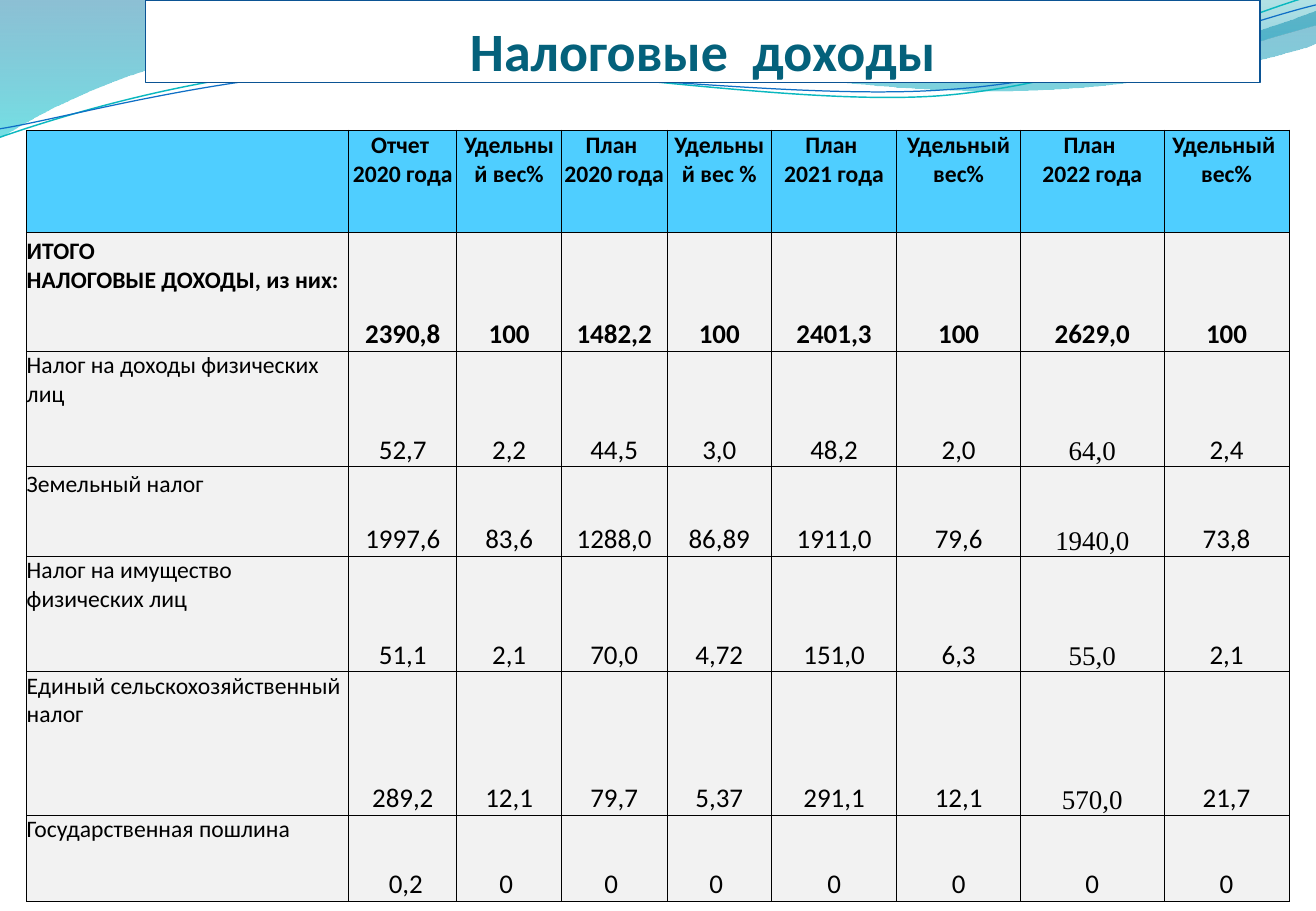
from lxml import etree
from pptx import Presentation
from pptx.dml.color import RGBColor
from pptx.enum.shapes import MSO_SHAPE
from pptx.enum.text import MSO_ANCHOR, PP_ALIGN
from pptx.oxml import parse_xml
from pptx.oxml.ns import qn
from pptx.util import Inches, Pt

HEADERS = ["", "Отчет \n2020 года", "Удельный вес%", "План \n2020 года", "Удельный вес %",
           "План \n2021 года", "Удельный вес%", "План \n2022 года", "Удельный \nвес%"]
TAXES = [
    ["ИТОГО\nНАЛОГОВЫЕ ДОХОДЫ, из них:", "2390,8", "100", "1482,2", "100", "2401,3", "100", "2629,0", "100"],
    ["Налог на доходы физических лиц", "52,7", "2,2", "44,5", "3,0", "48,2", "2,0", "64,0", "2,4"],
    ["Земельный налог", "1997,6", "83,6", "1288,0", "86,89", "1911,0", "79,6", "1940,0", "73,8"],
    ["Налог на имущество физических лиц", "51,1", "2,1", "70,0", "4,72", "151,0", "6,3", "55,0", "2,1"],
    ["Единый сельскохозяйственный налог", "289,2", "12,1", "79,7", "5,37", "291,1", "12,1", "570,0", "21,7"],
    ["Государственная пошлина", " 0,2", "0 ", "0 ", "0 ", "0", "0", "0", "0"],
]
COLUMN_WIDTHS = [2.65, 0.89, 0.86, 0.87, 0.86, 1.03, 1.02, 1.18, 1.03]
ROW_HEIGHTS = [0.84, 0.98, 0.95, 0.74, 0.95, 1.18, 0.71]
LABEL_OFFSETS = {1: 0.04, 3: 0.03}
PLAN_2022 = 7

BANDS = [
    ([(0, 0), (4.77, 0), (5.15, 0.17, 7.19, 0.63, 8.22, 0.63), (9.24, 0.63, 10.38, 0.26, 10.83, 0.09),
      (10.83, 0.36), (10.65, 0.44, 9.42, 0.76, 8.08, 0.75), (6.74, 0.75, 4.14, 0.28, 2.79, 0.34),
      (1.4, 0.35, 0.5, 0.83, 0, 1.13)],
     [(0, "0074A1", 45), (1, "00C6CF", 55)]),
    ([(5.19, 0), (5.52, 0.11, 7.39, 0.62, 8.33, 0.65), (9.27, 0.69, 10.42, 0.32, 10.83, 0.21), (10.83, 0)],
     [(0, "00A1A9", 30), (0.8, "008BBF", 45)]),
]
WAVES = [
    ([(0, 1.13), (0.52, 0.95, 1.71, 0.58, 3, 0.53), (4.28, 0.47, 6.42, 0.88, 7.72, 0.79),
      (9.02, 0.69, 10.17, 0.14, 10.81, -0.04)], "0AB8BF", 0.85),
    ([(0, 1.06), (0.51, 0.98, 1.77, 0.62, 3.07, 0.57), (4.36, 0.52, 6.47, 0.83, 7.76, 0.74),
      (9.06, 0.66, 10.2, 0.19, 10.83, 0.04)], "0F6FC6", 0.75),
]


def color(hex_string):
    return RGBColor.from_string(hex_string)


def add_outline(slide, left, top, segments, close):
    points = [(Inches(left + x), Inches(top + y))
              for segment in segments for x, y in zip(segment[::2], segment[1::2])]
    builder = slide.shapes.build_freeform(*points[0])
    builder.add_line_segments(points[1:], close=close)
    outline = builder.convert_to_shape()
    outline.shadow.inherit = False
    lines = iter(list(outline._element.iter(qn("a:lnTo"))))
    for segment in segments[1:]:
        line = next(lines)
        if len(segment) == 6:
            line.tag = qn("a:cubicBezTo")
            for _ in range(2):
                following = next(lines)
                line.append(following[0])
                following.getparent().remove(following)
    return outline


def add_backdrop(slide, left, top):
    for segments, stops in BANDS:
        band = add_outline(slide, left, top, segments, True)
        band.line.fill.background()
        band.fill.gradient()
        band.fill.gradient_angle = 270
        for stop, (position, hex_string, _) in zip(band.fill.gradient_stops, stops):
            stop.position = position
            stop.color.rgb = color(hex_string)
        shades = band.fill._xPr.iter(qn("a:srgbClr"))
        for shade, (_, _, opacity) in zip(shades, stops):
            etree.SubElement(shade, qn("a:alpha")).set("val", str(opacity * 1000))
    for segments, hex_string, width in WAVES:
        wave = add_outline(slide, left, top, segments, False)
        wave.fill.background()
        wave.line.color.rgb = color(hex_string)
        wave.line.width = Pt(width)


def write(frame, text, size, font, hex_string, bold, align):
    frame.text = text
    for paragraph in frame.paragraphs:
        paragraph.alignment = align
        paragraph.font.size = Pt(size)
        paragraph.font.name = font
        paragraph.font.bold = bold
        paragraph.font.color.rgb = color(hex_string)


def add_title(slide, left, top, width, height):
    title = slide.shapes.add_shape(MSO_SHAPE.RECTANGLE, Inches(left), Inches(top), Inches(width), Inches(height))
    title.shadow.inherit = False
    title.fill.solid()
    title.fill.fore_color.rgb = color("FFFFFF")
    title.line.color.rgb = color("0B5394")
    title.line.width = Pt(0.75)
    frame = title.text_frame
    frame.word_wrap = True
    frame.vertical_anchor = MSO_ANCHOR.BOTTOM
    frame.margin_left = frame.margin_right = frame.margin_bottom = 0
    frame.margin_top = Inches(0.05)
    write(frame, "Налоговые  доходы", 32, "Calibri", "04617B", True, PP_ALIGN.CENTER)


def style_cell(cell, hex_string, margin, margin_top, anchor):
    cell.fill.solid()
    cell.fill.fore_color.rgb = color(hex_string)
    cell.margin_left = cell.margin_right = Inches(margin)
    cell.margin_top = Inches(margin_top)
    cell.margin_bottom = 0
    cell.vertical_anchor = anchor
    for index, side in enumerate(["lnL", "lnR", "lnT", "lnB"]):
        cell._tc.get_or_add_tcPr().insert(index, parse_xml(
            f'<a:{side} xmlns:a="http://schemas.openxmlformats.org/drawingml/2006/main" w="{Pt(0.5)}">'
            f'<a:solidFill><a:srgbClr val="000000"/></a:solidFill></a:{side}>'))


def add_tax_table(slide, left, top):
    rows = [HEADERS] + TAXES
    table = slide.shapes.add_table(
        len(rows), len(HEADERS), Inches(left), Inches(top),
        Inches(sum(COLUMN_WIDTHS)), Inches(sum(ROW_HEIGHTS))).table
    table.first_row = table.horz_banding = False
    for column, width in zip(table.columns, COLUMN_WIDTHS):
        column.width = Inches(width)
    for row, height in zip(table.rows, ROW_HEIGHTS):
        row.height = Inches(height)
    for r, texts in enumerate(rows):
        for c, text in enumerate(texts):
            cell = table.cell(r, c)
            header, label = r == 0, c == 0
            if header:
                style_cell(cell, "4FCEFF", 0.01, 0.01, MSO_ANCHOR.TOP)
            elif label:
                style_cell(cell, "F2F2F2", 0, LABEL_OFFSETS.get(r, 0), MSO_ANCHOR.TOP)
            else:
                style_cell(cell, "F2F2F2", 0, 0, MSO_ANCHOR.BOTTOM)
            font = "Times New Roman" if c == PLAN_2022 and 2 <= r <= 5 else "Calibri"
            write(cell.text_frame, text, 14 if header or label else 16, font, "000000", r < 2,
                  PP_ALIGN.LEFT if label else PP_ALIGN.CENTER)


def main():
    presentation = Presentation()
    presentation.slide_width = Inches(10.83)
    presentation.slide_height = Inches(7.5)
    slide = presentation.slides.add_slide(presentation.slide_layouts[6])
    add_backdrop(slide, 0, 0)
    add_title(slide, 1.2, 0, 9.17, 0.68)
    add_tax_table(slide, 0.22, 1.07)
    presentation.save("out.pptx")


if __name__ == "__main__":
    main()
